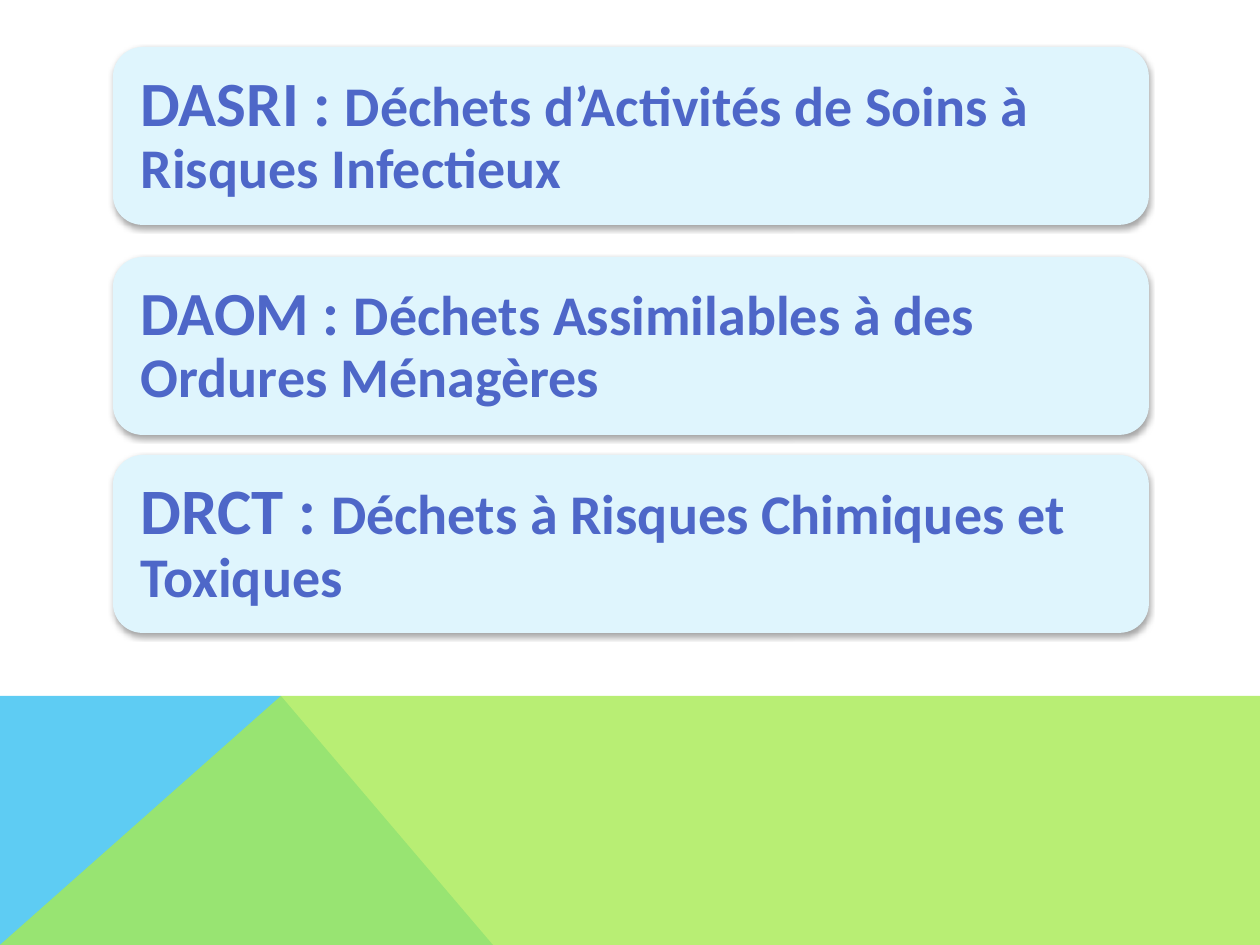
import pptx
import pptx.dml.color
import pptx.enum.shapes
import pptx.enum.text
import pptx.oxml
import pptx.oxml.ns
import pptx.util

RGB = pptx.dml.color.RGBColor
BLUE = RGB(0x5E, 0xCC, 0xF3)
GREEN = RGB(0xA7, 0xEA, 0x52)
PALE = RGB(0xDF, 0xF5, 0xFD)
INDIGO = RGB(0x4E, 0x67, 0xC8)
SCALE = 914400 / 126
WIDE, HIGH = 1260, 945


def emu(px):
    return pptx.util.Emu(round(px * SCALE))


def apply(target, values):
    for name, value in values.items():
        setattr(target, name, value)


class Deck:
    font = {"name": "Calibri", "bold": True}
    frame = {
        "word_wrap": True,
        "vertical_anchor": pptx.enum.text.MSO_ANCHOR.MIDDLE,
        **{f"margin_{side}": emu(19) for side in ("left", "top", "right", "bottom")},
    }
    para = {"alignment": pptx.enum.text.PP_ALIGN.LEFT, "line_spacing": 0.9}

    def __init__(self):
        self.file = pptx.Presentation()
        apply(self.file, {"slide_width": emu(WIDE), "slide_height": emu(HIGH)})
        self.slide = self.file.slides.add_slide(self.file.slide_layouts[6])

    def paint(self, shape, color):
        shape.shadow.inherit = False
        shape.fill.solid()
        shape.fill.fore_color.rgb = color
        shape.line.fill.background()

    def band(self, points, color, alpha=100):
        build = self.slide.shapes.build_freeform(*points[0], scale=SCALE)
        build.add_line_segments(points[1:], close=True)
        shape = build.convert_to_shape()
        self.paint(shape, color)
        if alpha < 100:
            tint = shape.fill._xPr.find(".//" + pptx.oxml.ns.qn("a:srgbClr"))
            tint.append(pptx.oxml.parse_xml(
                f'<a:alpha {pptx.oxml.ns.nsdecls("a")} val="{alpha * 1000}"/>'))

    def shade(self, shape):
        effect = shape._element.spPr.find(pptx.oxml.ns.qn("a:effectLst"))
        effect.append(pptx.oxml.parse_xml(
            f'<a:outerShdw {pptx.oxml.ns.nsdecls("a")} blurRad="{pptx.util.Pt(3.1)}" '
            f'dist="{pptx.util.Pt(1.8)}" dir="5400000" rotWithShape="0">'
            '<a:srgbClr val="000000"><a:alpha val="35000"/></a:srgbClr></a:outerShdw>'))

    def card(self, box, runs):
        shape = self.slide.shapes.add_shape(
            pptx.enum.shapes.MSO_SHAPE.ROUNDED_RECTANGLE, *map(emu, box))
        self.paint(shape, PALE)
        self.shade(shape)
        apply(shape.text_frame, self.frame)
        para = shape.text_frame.paragraphs[0]
        apply(para, self.para)
        for text, size in runs:
            run = para.add_run()
            run.text = text
            apply(run.font, {**self.font, "size": pptx.util.Pt(size)})
            run.font.color.rgb = INDIGO


def main():
    deck = Deck()
    top, peak = 696, 281
    deck.band([(0, HIGH), (0, top), (peak, top), (493, HIGH)], BLUE)
    deck.band([(0, HIGH), (peak, top), (WIDE, top), (WIDE, HIGH)], GREEN, 80)
    cards = [
        (47, "DASRI : ", 36, "Déchets d’Activités de Soins à Risques Infectieux"),
        (257, "DAOM : ", 35, "Déchets Assimilables à des Ordures Ménagères"),
        (455, "DRCT : ", 37, "Déchets à Risques Chimiques et Toxiques"),
    ]
    for y, code, size, label in cards:
        deck.card((113, y, 1036, 178), [(code, size), (label, 32)])
    deck.file.save("out.pptx")


if __name__ == "__main__":
    main()
